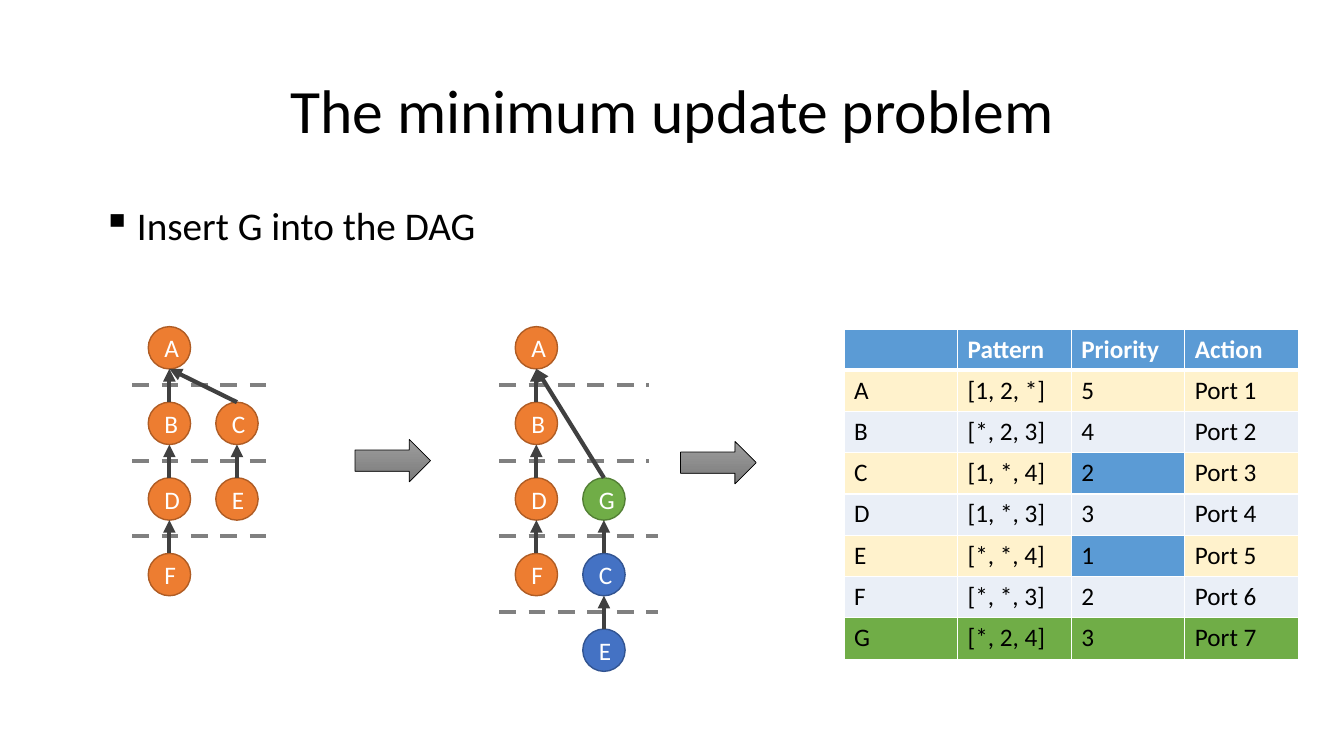
from lxml import etree
from pptx import Presentation
from pptx.dml.color import RGBColor
from pptx.enum.dml import MSO_LINE
from pptx.enum.shapes import MSO_CONNECTOR, MSO_SHAPE
from pptx.enum.text import MSO_ANCHOR, PP_ALIGN
from pptx.oxml.ns import qn
from pptx.util import Inches, Pt

CENTER = PP_ALIGN.CENTER
MIDDLE = MSO_ANCHOR.MIDDLE
LINE = MSO_CONNECTOR.STRAIGHT
OVAL = MSO_SHAPE.OVAL
ARROW = MSO_SHAPE.RIGHT_ARROW
DASH = MSO_LINE.DASH

FONT = "Calibri"
COLORS = {
    "black": "000000", "white": "FFFFFF",
    "orange": "ED7D31", "orange rim": "AF5C24",
    "green": "70AD47", "green rim": "538035",
    "blue": "4472C4", "blue rim": "325491",
    "level": "808080", "edge": "404040",
    "light": "9D9D9D", "dark": "7C7C7C",
    "head": "5B9BD5", "cream": "FFF2CC", "pale": "EAEFF7",
}

SIZE = 0.42
TOP = 3.24
COL_STEP = 0.67
ROW_STEP = 0.75

OLD_NODES = {
    "A": (0, 0, "orange"), "B": (0, 1, "orange"), "C": (1, 1, "orange"),
    "D": (0, 2, "orange"), "E": (1, 2, "orange"), "F": (0, 3, "orange"),
}
OLD_EDGES = ["BA", "CA", "DB", "FD", "EC"]
NEW_NODES = {
    "A": (0, 0, "orange"), "B": (0, 1, "orange"), "G": (1, 2, "green"),
    "D": (0, 2, "orange"), "C": (1, 3, "blue"), "F": (0, 3, "orange"),
    "E": (1, 4, "blue"),
}
NEW_EDGES = ["BA", "DB", "CG", "FD", "EC", "GA"]

RULES = [
    ("", "Pattern", "Priority", "Action"),
    ("A", "[1, 2, *]", "5", "Port 1"),
    ("B", "[*, 2, 3]", "4", "Port 2"),
    ("C", "[1, *, 4]", "2", "Port 3"),
    ("D", "[1, *, 3]", "3", "Port 4"),
    ("E", "[*, *, 4]", "1", "Port 5"),
    ("F", "[*, *, 3]", "2", "Port 6"),
    ("G", "[*, 2, 4]", "3", "Port 7"),
]
CHANGED = {(3, 2), (5, 2)}


def color(name):
    return RGBColor.from_string(COLORS[name])


def style(para, size, name, bold=False):
    for run in para.runs:
        run.font.name = FONT
        run.font.size = Pt(size)
        run.font.bold = bold
        run.font.color.rgb = color(name)


def add_text(slide, text, box, size):
    frame = slide.shapes.add_textbox(*map(Inches, box)).text_frame
    frame.word_wrap = True
    frame.text = text
    para = frame.paragraphs[0]
    para.line_spacing = 0.9
    style(para, size, "black")
    return frame


def add_bullet(para, indent):
    props = para._p.get_or_add_pPr()
    props.set("marL", str(Inches(indent)))
    props.set("indent", str(-Inches(indent)))
    etree.SubElement(props, qn("a:buChar"), char="▪")


def add_node(slide, label, left, top, fill):
    node = slide.shapes.add_shape(
        OVAL, Inches(left), Inches(top), Inches(SIZE), Inches(SIZE))
    node.shadow.inherit = False
    node.fill.solid()
    node.fill.fore_color.rgb = color(fill)
    node.line.color.rgb = color(fill + " rim")
    node.line.width = Pt(1)
    frame = node.text_frame
    frame.text = label
    frame.vertical_anchor = MIDDLE
    frame.paragraphs[0].alignment = CENTER
    style(frame.paragraphs[0], 18, "white")
    return node


def add_line(slide, start, end, name):
    line = slide.shapes.add_connector(LINE, *start, *end)
    line.line.color.rgb = color(name)
    line.line.width = Pt(3)
    etree.SubElement(line._element.spPr, qn("a:effectLst"))
    return line


def add_level(slide, left, right, top):
    line = add_line(slide, (Inches(left), Inches(top)),
                    (Inches(right), Inches(top)), "level")
    line.line.dash_style = DASH


def add_edge(slide, child, parent):
    start = child.left + child.width // 2, child.top
    end = parent.left + parent.width // 2, parent.top + parent.height
    edge = add_line(slide, start, end, "edge")
    edge.begin_connect(child, 0)
    etree.SubElement(edge.line._get_or_add_ln(), qn("a:tailEnd"),
                     type="triangle")


def add_graph(slide, left, nodes, edges, ends):
    made = {}
    for label, (col, row, fill) in nodes.items():
        made[label] = add_node(slide, label, left + col * COL_STEP,
                               TOP + row * ROW_STEP, fill)
    for row, end in enumerate(ends):
        add_level(slide, left - 0.16, end, TOP + 0.58 + row * ROW_STEP)
    for child, parent in edges:
        add_edge(slide, made[child], made[parent])


def add_arrow(slide, left, top):
    arrow = slide.shapes.add_shape(
        ARROW, Inches(left), Inches(top), Inches(0.75), Inches(0.42))
    arrow.shadow.inherit = False
    arrow.fill.gradient()
    arrow.fill.gradient_angle = 270
    for stop, name in zip(arrow.fill.gradient_stops, ("light", "dark")):
        stop.color.rgb = color(name)
    arrow.line.color.rgb = color("black")
    arrow.line.width = Pt(0.5)


def add_border(cell, head):
    props = cell._tc.get_or_add_tcPr()
    for side in "LRTB":
        width = 3 if head and side == "B" else 1
        line = etree.SubElement(props, qn("a:ln" + side), w=str(Pt(width)))
        fill = etree.SubElement(line, qn("a:solidFill"))
        etree.SubElement(fill, qn("a:srgbClr"), val=COLORS["white"])


def cell_fill(row, col):
    if row == 0 or (row, col) in CHANGED:
        return "head"
    if row == len(RULES) - 1:
        return "green"
    return "cream" if row % 2 else "pale"


def add_rules(slide):
    table = slide.shapes.add_table(
        len(RULES), len(RULES[0]), Inches(8.37), Inches(3.27),
        Inches(4.51), Inches(3.24)).table
    table.horz_banding = False
    for row, values in enumerate(RULES):
        head = row == 0
        table.rows[row].height = Inches(0.37 if head else 0.41)
        for col, value in enumerate(values):
            cell = table.cell(row, col)
            cell.text = value
            add_border(cell, head)
            cell.fill.solid()
            cell.fill.fore_color.rgb = color(cell_fill(row, col))
            style(cell.text_frame.paragraphs[0], 18,
                  "white" if head else "black", head)


def main():
    deck = Presentation()
    deck.slide_width = Inches(13.33)
    deck.slide_height = Inches(7.5)
    slide = deck.slides.add_slide(deck.slide_layouts[6])
    title = add_text(slide, "The minimum update problem",
                     (0.92, 0.4, 11.5, 1.45), 44)
    title.vertical_anchor = MIDDLE
    title.paragraphs[0].alignment = CENTER
    body = add_text(slide, "Insert G into the DAG", (0.92, 2, 11.5, 0.76), 28)
    add_bullet(body.paragraphs[0], 0.34)
    add_graph(slide, 1.47, OLD_NODES, OLD_EDGES, [2.64] * 3)
    add_graph(slide, 5.11, NEW_NODES, NEW_EDGES, [6.44, 6.44, 6.53, 6.53])
    add_arrow(slide, 3.52, 4.36)
    add_arrow(slide, 6.75, 4.38)
    add_rules(slide)
    deck.save("out.pptx")


if __name__ == "__main__":
    main()
